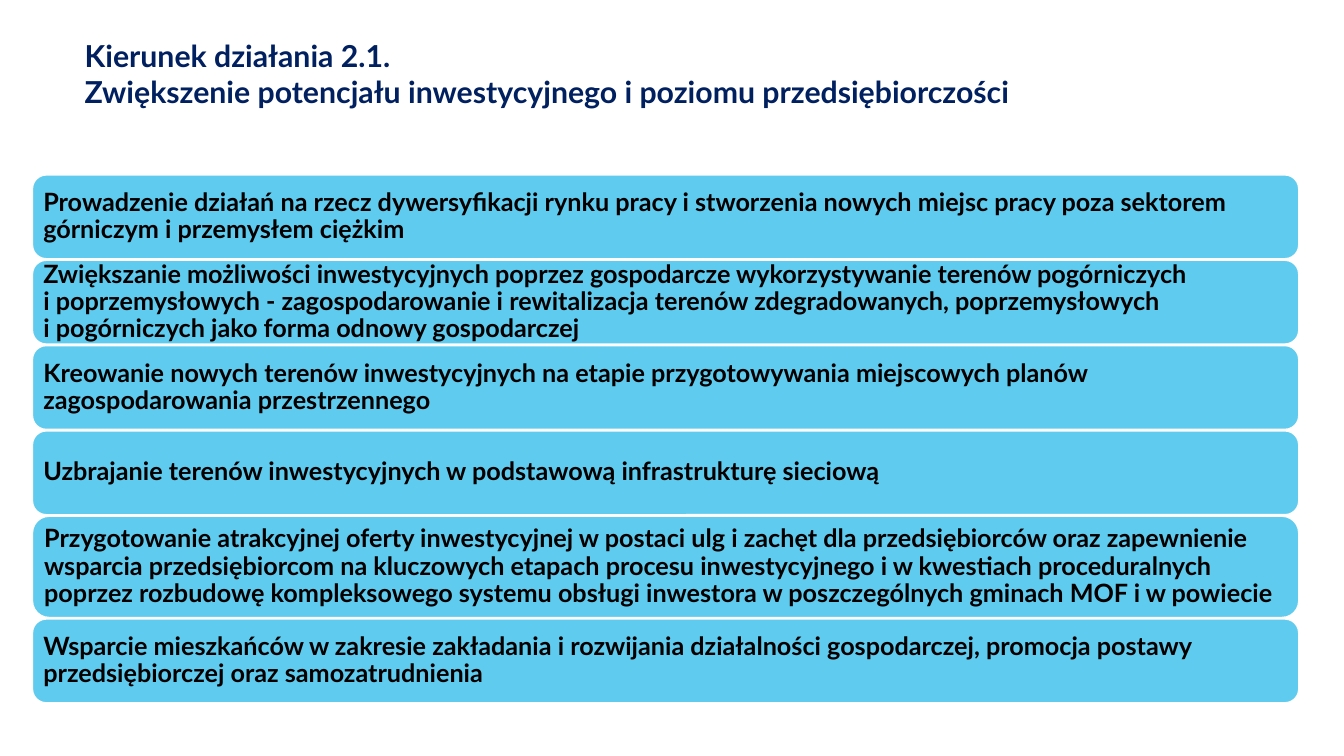
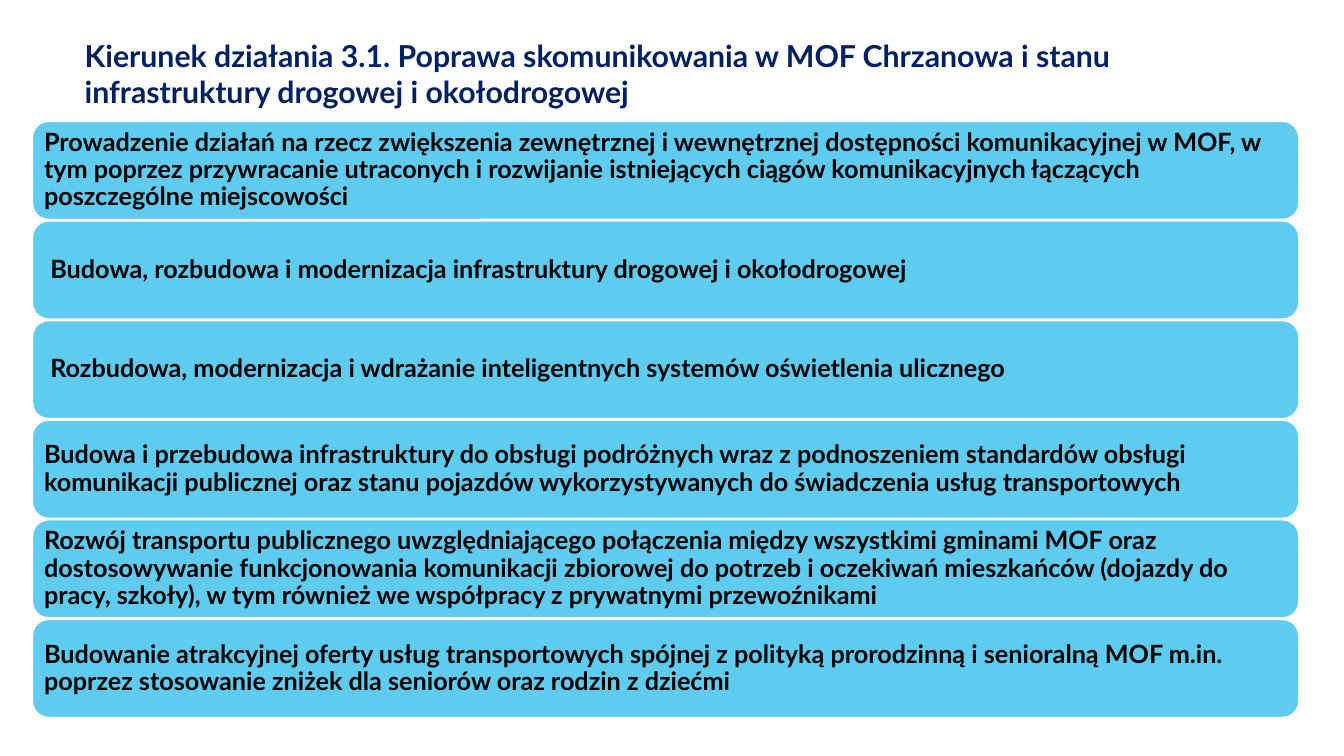
from dataclasses import dataclass

from pptx import Presentation
from pptx.dml.color import RGBColor
from pptx.enum.shapes import MSO_SHAPE
from pptx.enum.text import MSO_ANCHOR, MSO_AUTO_SIZE, PP_ALIGN
from pptx.util import Cm, Pt


@dataclass(frozen=True)
class Theme:
    """Colours, type sizes and shared measures in centimetres."""
    font: str = "Lato"
    title_color: RGBColor = RGBColor(0x00, 0x20, 0x60)
    text_color: RGBColor = RGBColor(0x00, 0x00, 0x00)
    band_fill: RGBColor = RGBColor(0x5F, 0xCB, 0xEF)
    band_line: RGBColor = RGBColor(0xFF, 0xFF, 0xFF)
    title_size: float = 21.6
    text_size: float = 18
    line_width: float = 1.5
    title_box: tuple = (1.88, 0.81, 29.92, 2.24)
    band_left: float = 0.81
    band_width: float = 31.93
    band_gap: float = 0.02
    inset: float = 0.18


@dataclass(frozen=True)
class Band:
    """A band's text, with its own height or extra indent where needed."""
    text: str
    height: float = 0
    indent: float = 0


THEME = Theme()

INVESTMENT_BANDS = [
    Band("Prowadzenie działań na rzecz dywersyfikacji rynku pracy i stworzenia nowych miejsc pracy "
         "poza sektorem górniczym i przemysłem ciężkim"),
    Band("Zwiększanie możliwości inwestycyjnych poprzez gospodarcze wykorzystywanie terenów pogórniczych\n"
         "i poprzemysłowych - zagospodarowanie i rewitalizacja terenów zdegradowanych, poprzemysłowych\n"
         "i pogórniczych jako forma odnowy gospodarczej"),
    Band("Kreowanie nowych terenów inwestycyjnych na etapie przygotowywania miejscowych planów "
         "zagospodarowania przestrzennego"),
    Band("Uzbrajanie terenów inwestycyjnych w podstawową infrastrukturę sieciową"),
    Band("Przygotowanie atrakcyjnej oferty inwestycyjnej w postaci ulg i zachęt dla przedsiębiorców "
         "oraz zapewnienie wsparcia przedsiębiorcom na kluczowych etapach procesu inwestycyjnego "
         "i w kwestiach proceduralnych poprzez rozbudowę kompleksowego systemu obsługi inwestora "
         "w poszczególnych gminach MOF i w powiecie", height=2.57),
    Band("Wsparcie mieszkańców w zakresie zakładania i rozwijania działalności gospodarczej, "
         "promocja postawy przedsiębiorczej oraz samozatrudnienia"),
]

TRANSPORT_BANDS = [
    Band("Prowadzenie działań na rzecz zwiększenia zewnętrznej i wewnętrznej dostępności komunikacyjnej "
         "w MOF, w tym poprzez przywracanie utraconych i rozwijanie istniejących ciągów komunikacyjnych "
         "łączących poszczególne miejscowości"),
    Band("Budowa, rozbudowa i modernizacja infrastruktury drogowej i okołodrogowej", indent=0.16),
    Band("Rozbudowa, modernizacja i wdrażanie inteligentnych systemów oświetlenia ulicznego", indent=0.16),
    Band("Budowa i przebudowa infrastruktury do obsługi podróżnych wraz z podnoszeniem standardów obsługi "
         "komunikacji publicznej oraz stanu pojazdów wykorzystywanych do świadczenia usług transportowych"),
    Band("Rozwój transportu publicznego uwzględniającego połączenia między wszystkimi gminami MOF oraz "
         "dostosowywanie funkcjonowania komunikacji zbiorowej do potrzeb i oczekiwań mieszkańców "
         "(dojazdy do pracy, szkoły), w tym również we współpracy z prywatnymi przewoźnikami"),
    Band("Budowanie atrakcyjnej oferty usług transportowych spójnej z polityką prorodzinną i senioralną "
         "MOF m.in. poprzez stosowanie zniżek dla seniorów oraz rodzin z dziećmi"),
]


def write_text(tf, text, size, color, spacing):
    """Write bold left-aligned text, one run per forced line."""
    tf.word_wrap = True
    tf.auto_size = MSO_AUTO_SIZE.NONE
    p = tf.paragraphs[0]
    p.alignment = PP_ALIGN.LEFT
    p.line_spacing = spacing
    for i, line in enumerate(text.split("\n")):
        if i:
            p.add_line_break()
        r = p.add_run()
        r.text = line
        r.font.name = THEME.font
        r.font.size = Pt(size)
        r.font.bold = True
        r.font.color.rgb = color


def set_title(s, text):
    """Place and format the title placeholder."""
    sp = s.shapes.title
    sp.left, sp.top, sp.width, sp.height = map(Cm, THEME.title_box)
    sp.text_frame.vertical_anchor = MSO_ANCHOR.TOP
    write_text(sp.text_frame, text, THEME.title_size, THEME.title_color, 1.0)


def add_band(s, band, top, height):
    """Add one rounded band with its text."""
    sp = s.shapes.add_shape(MSO_SHAPE.ROUNDED_RECTANGLE, Cm(THEME.band_left), Cm(top),
                            Cm(THEME.band_width), Cm(height))
    sp.shadow.inherit = False
    sp.fill.solid()
    sp.fill.fore_color.rgb = THEME.band_fill
    sp.line.color.rgb = THEME.band_line
    sp.line.width = Pt(THEME.line_width)
    tf = sp.text_frame
    tf.margin_left = Cm(THEME.inset + band.indent)
    tf.margin_right = tf.margin_top = tf.margin_bottom = Cm(THEME.inset)
    tf.vertical_anchor = MSO_ANCHOR.MIDDLE
    write_text(tf, band.text, THEME.text_size, THEME.text_color, 0.9)


def add_band_slide(prs, title, bands, top, height):
    """Add a titled slide with bands stacked from the given top."""
    s = prs.slides.add_slide(prs.slide_layouts[5])
    set_title(s, title)
    for band in bands:
        band_height = band.height or height
        add_band(s, band, top, band_height)
        top += band_height + THEME.band_gap


def main():
    """Build and save the presentation."""
    prs = Presentation()
    prs.slide_width, prs.slide_height = Cm(33.87), Cm(19.05)
    add_band_slide(prs, "Kierunek działania 2.1.\n"
                   "Zwiększenie potencjału inwestycyjnego i poziomu przedsiębiorczości",
                   INVESTMENT_BANDS, top=4.4, height=2.13)
    add_band_slide(prs, "Kierunek działania 3.1. Poprawa skomunikowania w MOF Chrzanowa i stanu "
                   "infrastruktury drogowej i okołodrogowej",
                   TRANSPORT_BANDS, top=3.05, height=2.49)
    prs.save("out.pptx")


if __name__ == "__main__":
    main()
